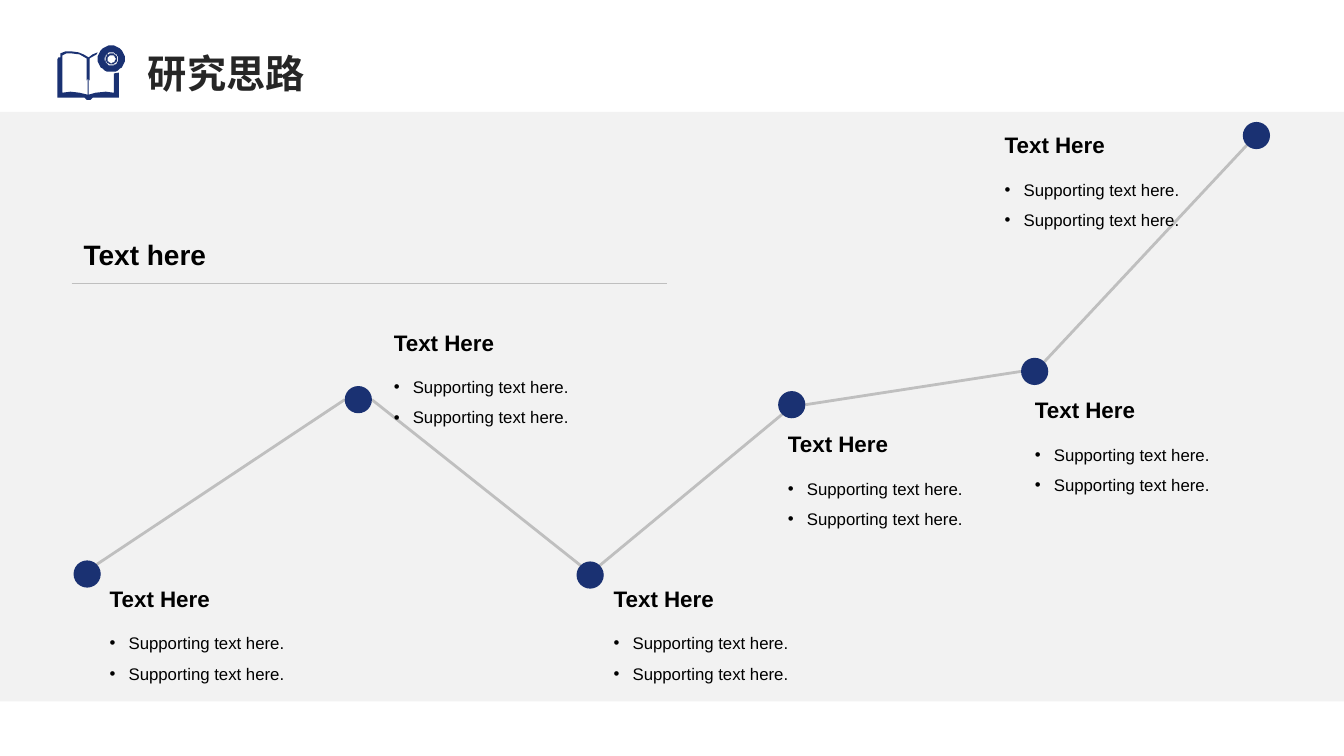
import math

from lxml import etree
from pptx import Presentation
from pptx import util as u
from pptx.dml.color import RGBColor
from pptx.enum import shapes, text
from pptx.oxml import ns

Pt = u.Pt
COLORS = {
    "white": "FFFFFF",
    "panel": "F2F2F2",
    "navy": "1A3172",
    "line": "BFBFBF",
    "title": "262626",
    "text": "000000",
}
DOT = 19.44
LABEL_W, HEAD_H, BODY_H = 168.5, 28.1, 51.8
MILESTONES = [
    ((52.56, 400.32), (71.3, 413.3)),
    ((246.24, 275.76), (274.3, 230.4)),
    ((411.84, 401.04), (431.3, 413.3)),
    ((555.84, 279.36), (555.8, 303.1)),
    ((729.36, 255.6), (732.2, 278.6)),
    ((887.76, 87.12), (710.6, 89.3)),
]
LINK_ANGLES = [(45, 180), (0, 135), (45, 225), (0, 180), (45, 225)]
BOOK = [(14, 6), (21, 7), (26, 9), (31, 12), (35, 9), (40, 7), (39, 9),
        (32, 13), (32, 35), (31, 33), (31, 49), (38, 47), (48, 46), (56, 47),
        (56, 28), (61, 27), (61, 52), (35, 52), (33, 53.5), (31, 54),
        (29, 53.5), (27, 52), (0, 52), (0, 14), (1, 12.5), (3, 12), (3, 8),
        (8, 6.5)]
PAGE = [(14, 8), (9, 8.5), (5, 10), (5, 47), (13, 46), (22, 47), (30, 49),
        (30, 33), (29, 35), (29, 13), (22, 9)]


def rgb(name):
    return RGBColor.from_string(COLORS[name])


def add_shape(s, kind, box, color=None):
    sp = s.shapes.add_shape(kind, *map(Pt, box))
    sp.shadow.inherit = False
    sp.line.fill.background()
    if color:
        sp.fill.solid()
        sp.fill.fore_color.rgb = rgb(color)
    else:
        sp.fill.background()
    return sp


def add_line(s, start, end, width):
    ln = s.shapes.add_connector(
        shapes.MSO_CONNECTOR.STRAIGHT, *map(Pt, (*start, *end)))
    ln.line.color.rgb = rgb("line")
    ln.line.width = Pt(width)
    etree.SubElement(ln._element.spPr, ns.qn("a:effectLst"))


def add_run(p, words, size, color="text", bold=False):
    p.alignment = text.PP_ALIGN.LEFT
    r = p.add_run()
    r.text = words
    r.font.name = "Arial"
    r.font.size = Pt(size)
    r.font.bold = bold
    r.font.color.rgb = rgb(color)


def add_text(s, box, wrap=True, anchor=text.MSO_ANCHOR.TOP):
    tf = s.shapes.add_textbox(*map(Pt, box)).text_frame
    tf.word_wrap = wrap
    tf.vertical_anchor = anchor
    return tf


def add_bullet(p):
    pPr = p._p.get_or_add_pPr()
    pPr.set("marL", str(Pt(13.5)))
    pPr.set("indent", str(Pt(-13.5)))
    p.line_spacing = 1.5
    etree.SubElement(pPr, ns.qn("a:buFont"), typeface="Arial")
    etree.SubElement(pPr, ns.qn("a:buChar"), char="•")


def circle(cx, cy, radius, steps=36):
    angles = [2 * math.pi * i / steps for i in range(steps)]
    return [(cx + radius * math.cos(a), cy + radius * math.sin(a))
            for a in angles]


def add_icon(s, x, y):
    contours = [BOOK, PAGE, circle(53.5, 13.2, 13.3)]
    contours += [circle(53.7, 13.6, radius) for radius in (6.5, 5.6, 4)]
    fb = s.shapes.build_freeform(*BOOK[0], scale=Pt(0.72))
    for i, points in enumerate(contours):
        if i:
            fb.move_to(*points[0])
        fb.add_line_segments(points[1:], close=True)
    sp = fb.convert_to_shape(Pt(x), Pt(y))
    sp.shadow.inherit = False
    sp.line.fill.background()
    sp.fill.solid()
    sp.fill.fore_color.rgb = rgb("navy")


def add_header(s, x, y, w, h):
    add_icon(s, x, y + 12.2)
    tf = add_text(s, (x + 57.6, y, w - 57.6, h), anchor=text.MSO_ANCHOR.BOTTOM)
    p = tf.paragraphs[0]
    p.line_spacing = 0.9
    add_run(p, "研究思路", 28, "title", True)


def add_subtitle(s, x, y, w, h):
    tf = add_text(s, (x, y, w, h), wrap=False)
    add_run(tf.paragraphs[0], "Text here", 20, bold=True)
    add_line(s, (x - 1.5, y + 36), (x + 424, y + 36), 0.25)


def add_label(s, x, y):
    sp = add_shape(s, shapes.MSO_SHAPE.ROUNDED_RECTANGLE,
                   (x, y, LABEL_W, HEAD_H))
    sp.adjustments[0] = 0
    tf = sp.text_frame
    tf.word_wrap = False
    tf.vertical_anchor = text.MSO_ANCHOR.MIDDLE
    add_run(tf.paragraphs[0], "Text Here", 16, bold=True)
    tf = add_text(s, (x, y + HEAD_H, LABEL_W, BODY_H))
    for p in (tf.paragraphs[0], tf.add_paragraph()):
        add_bullet(p)
        add_run(p, "Supporting text here.", 12)


def dot_edge(dot, degrees):
    a = math.radians(degrees)
    radius = DOT / 2
    return (dot[0] + radius * (1 + math.cos(a)),
            dot[1] + radius * (1 - math.sin(a)))


def add_path(s):
    dots = [dot for dot, label in MILESTONES]
    for a, b, (leave, arrive) in zip(dots, dots[1:], LINK_ANGLES):
        add_line(s, dot_edge(a, leave), dot_edge(b, arrive), 2)
    for dot in dots:
        add_shape(s, shapes.MSO_SHAPE.OVAL, (*dot, DOT, DOT), "navy")
    for dot, label in MILESTONES:
        add_label(s, *label)


def main():
    prs = Presentation()
    prs.slide_width, prs.slide_height = Pt(960), Pt(540)
    s = prs.slides.add_slide(prs.slide_layouts[6])
    s.background.fill.solid()
    s.background.fill.fore_color.rgb = rgb("panel")
    rect = shapes.MSO_SHAPE.RECTANGLE
    add_shape(s, rect, (0, 0, 960, 540), "white")
    add_shape(s, rect, (0, 80, 960, 421), "panel")
    add_path(s)
    add_subtitle(s, 52.6, 166.3, 452.9, 34.6)
    add_header(s, 41, 20.2, 912.2, 52.6)
    prs.save("out.pptx")


if __name__ == "__main__":
    main()
